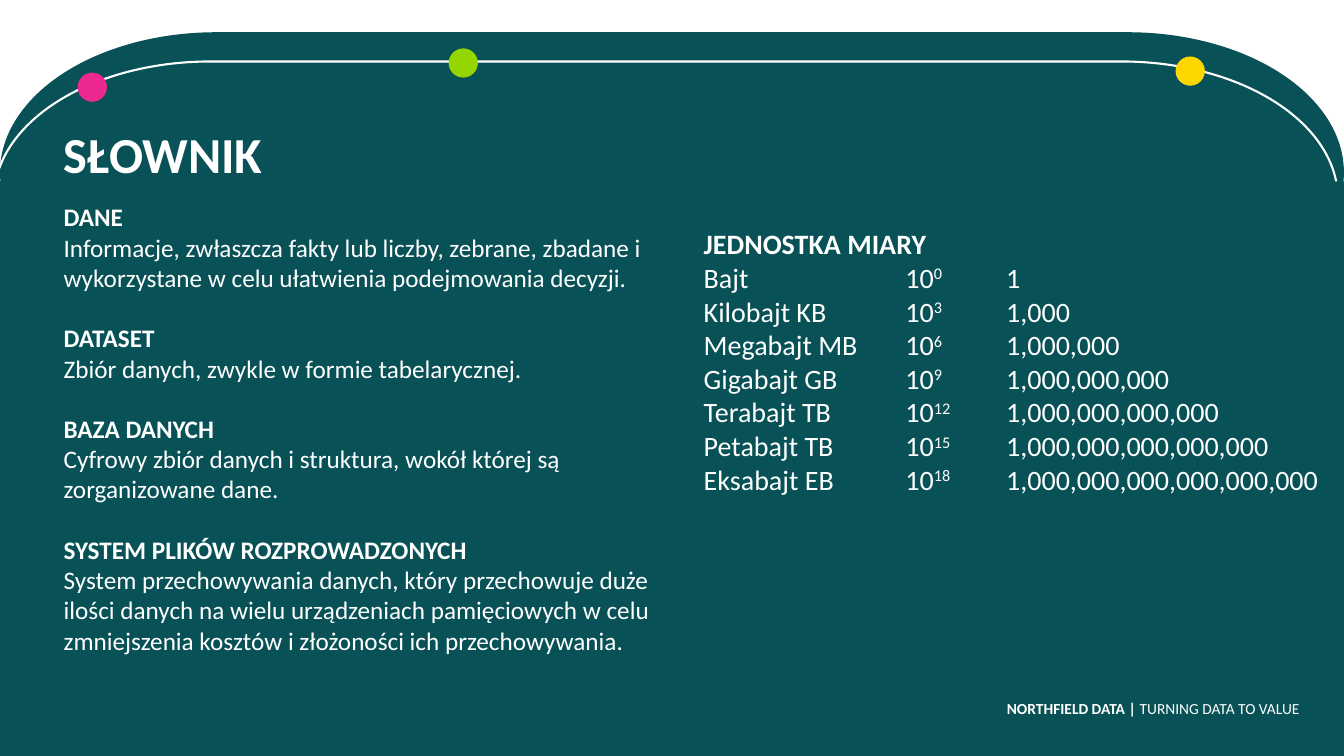
import pptx
import pptx.util
import pptx.dml.color
import pptx.enum.shapes
import pptx.enum.text
import lxml.etree

Pt = pptx.util.Pt
Inches = pptx.util.Inches
RGBColor = pptx.dml.color.RGBColor
MSO_SHAPE = pptx.enum.shapes.MSO_SHAPE
PP_ALIGN = pptx.enum.text.PP_ALIGN
MSO_ANCHOR = pptx.enum.text.MSO_ANCHOR
NS = "http://schemas.openxmlformats.org/drawingml/2006/main"

TEAL = RGBColor(0x08, 0x51, 0x56)
WHITE = RGBColor(0xFF, 0xFF, 0xFF)
GREEN = RGBColor(0x95, 0xD6, 0x00)
YELLOW = RGBColor(0xFF, 0xD7, 0x00)
PINK = RGBColor(0xED, 0x28, 0x91)

TERMS = [
    ("DANE", "Informacje, zwłaszcza fakty lub liczby, zebrane, zbadane i "
             "wykorzystane w celu ułatwienia podejmowania decyzji."),
    ("DATASET", "Zbiór danych, zwykle w formie tabelarycznej."),
    ("BAZA DANYCH", "Cyfrowy zbiór danych i struktura, wokół której są "
                    "zorganizowane dane."),
    ("SYSTEM PLIKÓW ROZPROWADZONYCH",
     "System przechowywania danych, który przechowuje duże ilości danych na "
     "wielu urządzeniach pamięciowych w celu zmniejszenia kosztów i "
     "złożoności ich przechowywania."),
]
UNITS = ["Bajt\t", "Kilobajt KB", "Megabajt MB", "Gigabajt GB",
         "Terabajt TB", "Petabajt TB", "Eksabajt EB"]

prs = pptx.Presentation()
prs.slide_width = Inches(13.33)
prs.slide_height = Inches(7.5)
s = prs.slides.add_slide(prs.slide_layouts[3])


def share(x, y, w, h):
    across, down = prs.slide_width / 100, prs.slide_height / 100
    return int(x * across), int(y * down), int(w * across), int(h * down)


def style(p, size, bold):
    p.line_spacing = 1.0
    p.space_before = Pt(0)
    for r in p.runs:
        r.font.name = "Calibri"
        r.font.size = Pt(size)
        r.font.bold = bold
        r.font.color.rgb = WHITE


DOT = (2.18, 3.87)
for kind, box, fill in [
    (MSO_SHAPE.FLOWCHART_TERMINATOR, (0, 4.27, 100, 37.07), TEAL),
    (MSO_SHAPE.FLOWCHART_TERMINATOR, (-0.45, 8.13, 100, 36.27), None),
    (MSO_SHAPE.RECTANGLE, (0, 24, 100, 76), TEAL),
    (MSO_SHAPE.OVAL, (33.38, 6.4, *DOT), GREEN),
    (MSO_SHAPE.OVAL, (87.47, 7.47, *DOT), YELLOW),
    (MSO_SHAPE.OVAL, (5.78, 9.6, *DOT), PINK),
]:
    sp = s.shapes.add_shape(kind, *share(*box))
    sp.shadow.inherit = False
    if fill is None:
        sp.fill.background()
        sp.line.color.rgb = WHITE
        sp.line.width = Pt(1.5)
    else:
        sp.fill.solid()
        sp.fill.fore_color.rgb = fill
        sp.line.fill.background()

title, terms, units = s.placeholders
for sp, box, anchor in [
    (title, (3.98, 16.13, 27.83, 9.2), MSO_ANCHOR.MIDDLE),
    (terms, (3.98, 26, 47.19, 61.87), MSO_ANCHOR.TOP),
    (units, (51.61, 29.33, 48.39, 41.73), MSO_ANCHOR.TOP),
]:
    sp.left, sp.top, sp.width, sp.height = share(*box)
    sp.text_frame.vertical_anchor = anchor
    sp.text_frame.auto_size = pptx.enum.text.MSO_AUTO_SIZE.NONE
    s.shapes._spTree.append(sp._element)

p = title.text_frame.paragraphs[0]
p.text = "SŁOWNIK"
p.alignment = PP_ALIGN.LEFT
style(p, 36, True)
p.line_spacing = 0.9

tf = terms.text_frame
tf.text = "\n".join(line for term in TERMS for line in term)
for i, p in enumerate(tf.paragraphs):
    heading = i % 2 == 0
    style(p, 18, heading)
    if heading and i:
        p.space_before = Pt(21.6)

tf = units.text_frame
tf.text = "\n".join(["JEDNOSTKA MIARY"] + [f"{unit}\t10" for unit in UNITS])
style(tf.paragraphs[0], 20, True)
for i, p in enumerate(tf.paragraphs[1:]):
    power = p.add_run()
    power.text = str(3 * i)
    p.add_run().text = f"\t{1000 ** i:,}"
    style(p, 20, False)
    power.font._element.set("baseline", "30000")

for sp in (terms, units):
    for p in sp.text_frame.paragraphs:
        pPr = p._p.get_or_add_pPr()
        pPr.set("marL", "0")
        pPr.set("indent", "0")
        pPr.set("defTabSz", str(Inches(1)))
        lxml.etree.SubElement(pPr, f"{{{NS}}}buNone")

tf = s.shapes.add_textbox(*share(6.83, 91.87, 90.62, 6)).text_frame
tf.word_wrap = True
p = tf.paragraphs[0]
p.text = "NORTHFIELD DATA |"
p.add_run().text = " TURNING DATA TO VALUE"
p.alignment = PP_ALIGN.RIGHT
style(p, 11, False)
p.runs[0].font.bold = True

prs.save("out.pptx")
